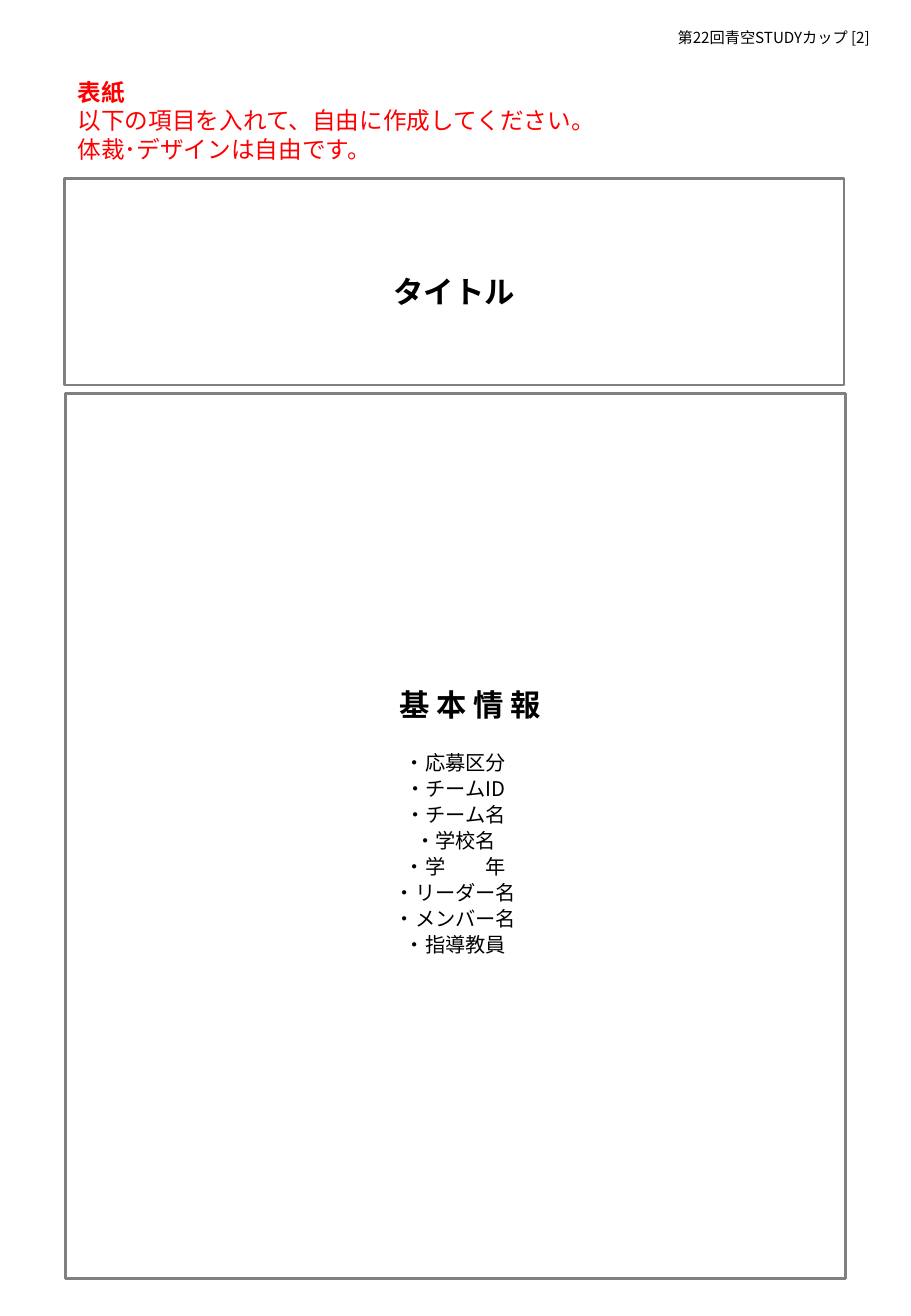
from dataclasses import dataclass

from lxml import etree
from pptx import Presentation
from pptx import util as u
from pptx.dml.color import RGBColor
from pptx.enum import shapes, text
from pptx.oxml import ns

FONT = "Noto Sans CJK JP"
BLACK, RED, GRAY, WHITE = "000000", "FF0000", "808080", "FFFFFF"
LEFT, CENTER, JUSTIFY = text.PP_ALIGN.LEFT, text.PP_ALIGN.CENTER, text.PP_ALIGN.JUSTIFY


@dataclass
class Line:
    words: str
    size: float
    bold: bool = False
    color: str = BLACK
    align: int = CENTER
    before: float = 1
    spacing: float = 1.0
    indent: float = 0


@dataclass
class Block:
    left: float
    top: float
    width: float
    height: float
    lines: list[Line]
    framed: bool = False
    bottom_margin: float = 0.05


def rgb(color: str) -> RGBColor:
    return RGBColor.from_string(color)


def write_line(para, line: Line) -> None:
    para.add_run().text = line.words
    para.alignment = line.align
    para.space_before = u.Pt(line.before)
    para.line_spacing = line.spacing
    font = para.font
    font.name = FONT
    font.size = u.Pt(line.size)
    font.bold = line.bold
    font.color.rgb = rgb(line.color)
    properties = para._p.get_or_add_pPr()
    if line.indent:
        properties.set("marL", str(u.Inches(line.indent)))
    east_asian = etree.SubElement(properties.find(ns.qn("a:defRPr")), ns.qn("a:ea"))
    east_asian.set("typeface", FONT)


def draw_block(page, block: Block) -> None:
    place = [u.Inches(n) for n in (block.left, block.top, block.width, block.height)]
    if block.framed:
        box = page.shapes.add_shape(shapes.MSO_SHAPE.RECTANGLE, *place)
        box.shadow.inherit = False
        box.fill.solid()
        box.fill.fore_color.rgb = rgb(WHITE)
        box.line.color.rgb = rgb(GRAY)
        box.line.width = u.Pt(1.5)
    else:
        box = page.shapes.add_textbox(*place)
    frame = box.text_frame
    frame.word_wrap = True
    frame.margin_bottom = u.Inches(block.bottom_margin)
    if block.framed:
        frame.vertical_anchor = text.MSO_ANCHOR.MIDDLE
    else:
        frame.auto_size = text.MSO_AUTO_SIZE.SHAPE_TO_FIT_TEXT
    for index, line in enumerate(block.lines):
        para = frame.add_paragraph() if index else frame.paragraphs[0]
        write_line(para, line)


def main() -> None:
    deck = Presentation()
    deck.slide_width, deck.slide_height = u.Inches(7.5), u.Inches(10.83)
    page = deck.slides.add_slide(deck.slide_layouts[6])

    title = [Line("タイトル", 18, bold=True, spacing=1.5)]
    heading = Line("基 本 情 報", 18, bold=True, spacing=1.5, indent=0.24)
    items = ["応募区分", "チームID", "チーム名", "学校名", "学　　年",
             "リーダー名", "メンバー名", "指導教員"]
    details = [Line(f"・{item}", 12, before=1 if index else 16.2)
               for index, item in enumerate(items)]
    guidance = [Line(words, 14, bold=index == 0, color=RED, align=JUSTIFY, before=0)
                for index, words in enumerate([
                    "表紙",
                    "以下の項目を入れて、自由に作成してください。",
                    "体裁･デザインは自由です。"])]
    header = [Line("第22回青空STUDYカップ [2]", 9, align=LEFT, before=0)]

    for block in [
        Block(0.53, 1.47, 6.42, 1.7, title, framed=True),
        Block(0.54, 3.24, 6.42, 7.28, [heading, *details], framed=True, bottom_margin=0.44),
        Block(0.54, 0.59, 6.11, 0.81, guidance),
        Block(5.48, 0.18, 2.02, 0.25, header),
    ]:
        draw_block(page, block)
    deck.save("out.pptx")


if __name__ == "__main__":
    main()
